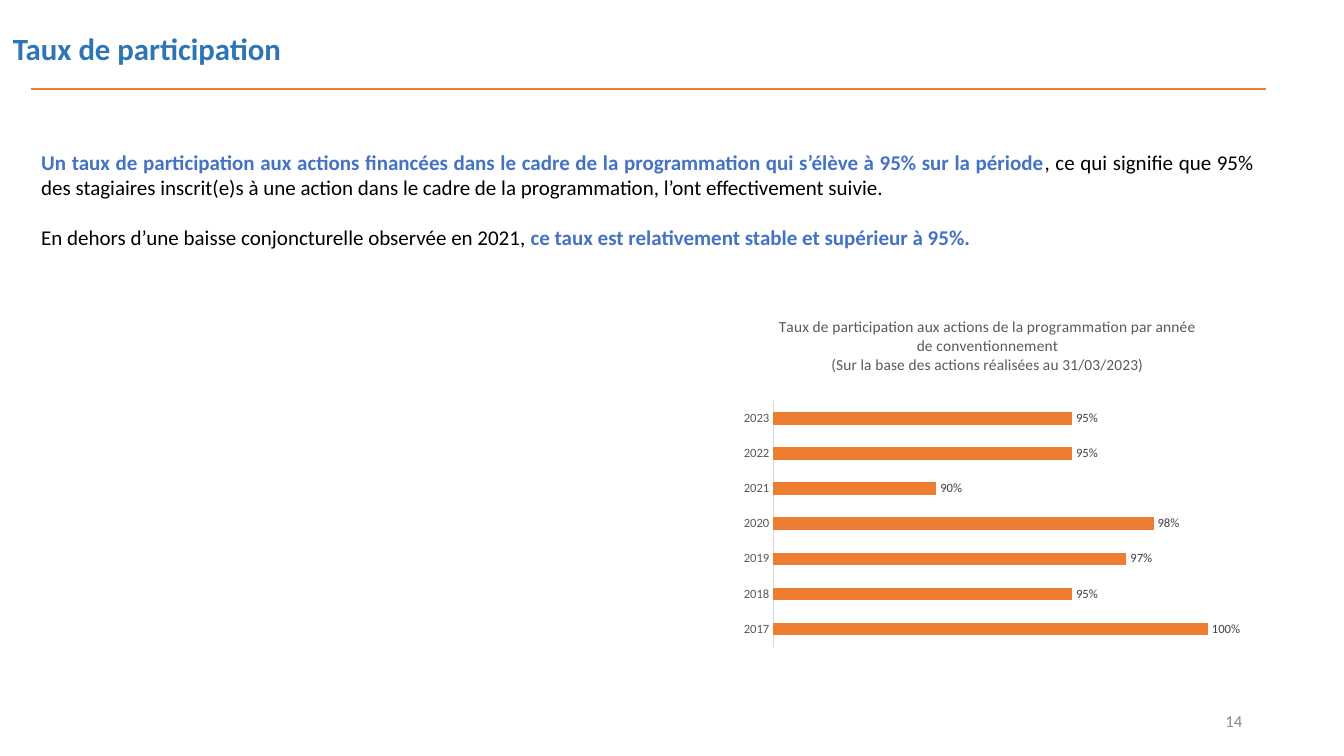
from pptx import Presentation
from pptx import util as u
from pptx.chart.data import CategoryChartData
from pptx.dml.color import RGBColor
from pptx.enum import chart as charts, shapes, text
from pptx.oxml import parse_xml
from pptx.oxml.ns import nsdecls

FONT = "Calibri"
ORANGE, BLUE, TITLE_BLUE = "ED7D31", "4472C4", "2E75B6"
BLACK, DARK_GREY, GREY, PALE_GREY = "000000", "595959", "8C8C8C", "D9D9D9"

presentation = Presentation()
presentation.slide_width, presentation.slide_height = u.Inches(13.33), u.Inches(7.5)
slide = presentation.slides.add_slide(presentation.slide_layouts[6])


def style(font, size, color, bold=False):
    font.name, font.size, font.bold = FONT, u.Pt(size), bold
    font.color.rgb = RGBColor.from_string(color)


def add_text(box, paragraphs, size, align=text.PP_ALIGN.LEFT,
             anchor=text.MSO_ANCHOR.MIDDLE, gap=0, line_spacing=1.0):
    """Add a text box; each paragraph is a list of (words, color, bold)."""
    frame = slide.shapes.add_textbox(*map(u.Inches, box)).text_frame
    frame.word_wrap = True
    frame.vertical_anchor = anchor
    for index, runs in enumerate(paragraphs):
        paragraph = frame.add_paragraph() if index else frame.paragraphs[0]
        paragraph.alignment = align
        paragraph.line_spacing = line_spacing
        paragraph.space_before = u.Pt(gap if index else 0)
        for words, color, bold in runs:
            run = paragraph.add_run()
            run.text = words
            style(run.font, size, color, bold)


# Heading and rule
add_text((0.03, 0.13, 10.73, 0.75), [[("Taux de participation", TITLE_BLUE, True)]],
         size=22, line_spacing=0.9)
rule = slide.shapes.add_connector(
    shapes.MSO_CONNECTOR.STRAIGHT, *map(u.Inches, (0.31, 0.88, 12.56, 0.88)))
rule.line.color.rgb = RGBColor.from_string(ORANGE)
rule.line.width = u.Pt(1.5)
rule._element.spPr.append(parse_xml(f"<a:effectLst {nsdecls('a')}/>"))

# Commentary
add_text(
    (0.31, 1.43, 12.22, 1.11),
    [
        [("Un taux de participation aux actions financées dans le cadre de la "
          "programmation qui s’élève à 95% sur la période", BLUE, True),
         (", ce qui signifie que 95% des stagiaires inscrit(e)s à une action dans le "
          "cadre de la programmation, l’ont effectivement suivie.", BLACK, False)],
        [("En dehors d’une baisse conjoncturelle observée en 2021, ", BLACK, False),
         ("ce taux est relativement stable et supérieur à 95%.", BLUE, True)],
    ],
    size=15, align=text.PP_ALIGN.JUSTIFY, anchor=text.MSO_ANCHOR.TOP, gap=18)

# Participation rate by year
data = CategoryChartData(number_format="0%")
data.categories = [str(year) for year in range(2017, 2024)]
data.add_series("Taux de participation", (1, 0.95, 0.97, 0.98, 0.90, 0.95, 0.95))
chart = slide.shapes.add_chart(
    charts.XL_CHART_TYPE.BAR_CLUSTERED, *map(u.Inches, (7.07, 2.98, 5.45, 3.44)), data).chart
chart.has_legend = False
style(chart.font, 10, BLACK)

chart.has_title = True
title_frame = chart.chart_title.text_frame
title_frame.text = ("Taux de participation aux actions de la programmation par année "
                    "de conventionnement\n(Sur la base des actions réalisées au 31/03/2023)")
for paragraph in title_frame.paragraphs:
    style(paragraph.runs[0].font, 11, DARK_GREY)
chart.chart_title.include_in_layout = False

years = chart.category_axis
years.major_tick_mark = charts.XL_TICK_MARK.NONE
years.format.line.color.rgb = RGBColor.from_string(PALE_GREY)
years.format.line.width = u.Pt(0.75)
style(years.tick_labels.font, 9, DARK_GREY)

rates = chart.value_axis
rates.minimum_scale, rates.maximum_scale = 0.84, 1.02
rates.has_major_gridlines = False
rates.visible = False

plot = chart.plots[0]
plot.gap_width = 182
plot.vary_by_categories = False
bars = plot.series[0].format.fill
bars.solid()
bars.fore_color.rgb = RGBColor.from_string(ORANGE)
plot.has_data_labels = True
labels = plot.data_labels
labels.show_value = True
labels.number_format, labels.number_format_is_linked = "0%", False
labels.position = charts.XL_LABEL_POSITION.OUTSIDE_END
style(labels.font, 9, "404040")

plot_area = chart._chartSpace.chart.plotArea
for layout in plot_area.findall("{*}layout"):
    plot_area.remove(layout)
placement = "".join(f'<c:{name} val="{value}"/>' for name, value in (
    ("layoutTarget", "inner"), ("xMode", "edge"), ("yMode", "edge"),
    ("x", 0.11), ("y", 0.29), ("w", 0.89), ("h", 0.71)))
plot_area.insert(0, parse_xml(
    f"<c:layout {nsdecls('c')}><c:manualLayout>{placement}</c:manualLayout></c:layout>"))

# Page number
add_text((9.42, 6.95, 3, 0.4), [[("14", GREY, False)]], size=12, align=text.PP_ALIGN.RIGHT)

presentation.save("out.pptx")
